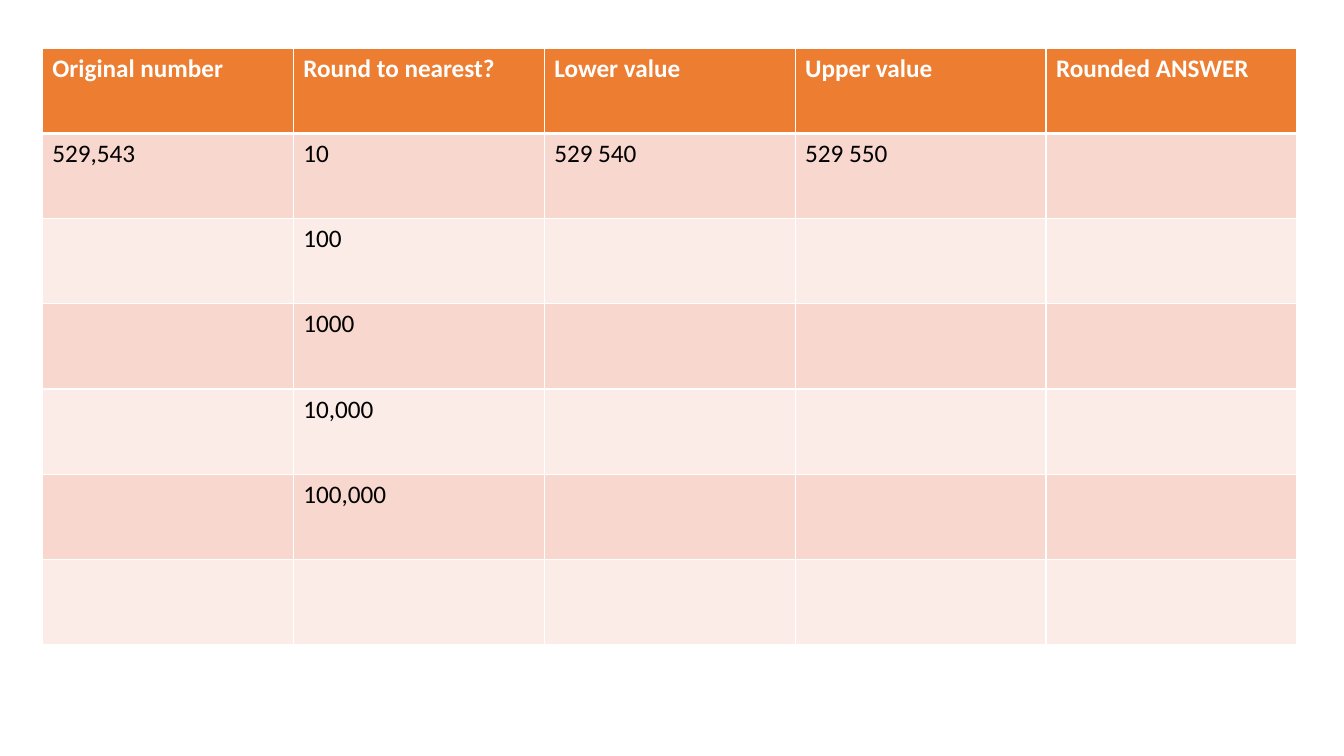
import dataclasses

import lxml.etree
import pptx
import pptx.dml.color
import pptx.oxml.ns
import pptx.util

SCALE = 4572  # EMU in one px, 200 px to the inch
WHITE = pptx.dml.color.RGBColor(0xFF, 0xFF, 0xFF)
BLACK = pptx.dml.color.RGBColor(0x00, 0x00, 0x00)
ORANGE = pptx.dml.color.RGBColor(0xED, 0x7D, 0x31)
PEACH = pptx.dml.color.RGBColor(0xF8, 0xD7, 0xCE)
BLUSH = pptx.dml.color.RGBColor(0xFC, 0xEC, 0xE8)

LEFT, TOP, COL, ROW = 84, 96, 498, 169
THIN, THICK = 1, 3

ROWS = [
    ["Original number", "Round to nearest?", "Lower value", "Upper value", "Rounded ANSWER"],
    ["529,543", "10", "529 540", "529 550", ""],
    ["", "100", "", "", ""],
    ["", "1000", "", "", ""],
    ["", "10,000", "", "", ""],
    ["", "100,000", "", "", ""],
    ["", "", "", "", ""],
]


@dataclasses.dataclass
class Look:
    fill: pptx.dml.color.RGBColor
    ink: pptx.dml.color.RGBColor
    bold: bool = False
    above: int = THIN
    below: int = THIN


HEAD = Look(ORANGE, WHITE, bold=True, below=THICK)
FIRST = Look(PEACH, BLACK, above=THICK)
BANDS = [Look(BLUSH, BLACK), Look(PEACH, BLACK)]


def px(size: int) -> pptx.util.Emu:
    return pptx.util.Emu(size * SCALE)


def pick(row: int) -> Look:
    return [HEAD, FIRST][row] if row < 2 else BANDS[row % 2]


def edge(cell, look: Look) -> None:
    """Draw the white cell borders, which must precede the fill."""
    props = cell._tc.get_or_add_tcPr()
    widths = {"a:lnL": THIN, "a:lnR": THIN, "a:lnT": look.above, "a:lnB": look.below}
    for spot, (tag, width) in enumerate(widths.items()):
        line = lxml.etree.Element(pptx.oxml.ns.qn(tag), w=str(pptx.util.Pt(width)))
        solid = lxml.etree.SubElement(line, pptx.oxml.ns.qn("a:solidFill"))
        lxml.etree.SubElement(solid, pptx.oxml.ns.qn("a:srgbClr"), val=str(WHITE))
        props.insert(spot, line)


def paint(cell, text: str, look: Look) -> None:
    cell.fill.solid()
    cell.fill.fore_color.rgb = look.fill
    edge(cell, look)
    cell.text = text
    font = cell.text_frame.paragraphs[0].font
    style = {"name": "Calibri", "size": pptx.util.Pt(18), "bold": look.bold}
    # Runs carry the format; an empty cell takes it on its paragraph
    runs = cell.text_frame.paragraphs[0].runs
    for font in [run.font for run in runs] or [font]:
        for key, value in style.items():
            setattr(font, key, value)
        font.color.rgb = look.ink


def main() -> None:
    deck = pptx.Presentation()
    deck.slide_width, deck.slide_height = px(2667), px(1500)
    slide = deck.slides.add_slide(deck.slide_layouts[6])

    # Rounding table
    high, wide = len(ROWS), len(ROWS[0])
    frame = slide.shapes.add_table(high, wide, px(LEFT), px(TOP), px(wide * COL), px(high * ROW))
    table = frame.table
    for col in table.columns:
        col.width = px(COL)
    for num, texts in enumerate(ROWS):
        table.rows[num].height = px(ROW)
        for spot, text in enumerate(texts):
            paint(table.cell(num, spot), text, pick(num))

    deck.save("out.pptx")


if __name__ == "__main__":
    main()
